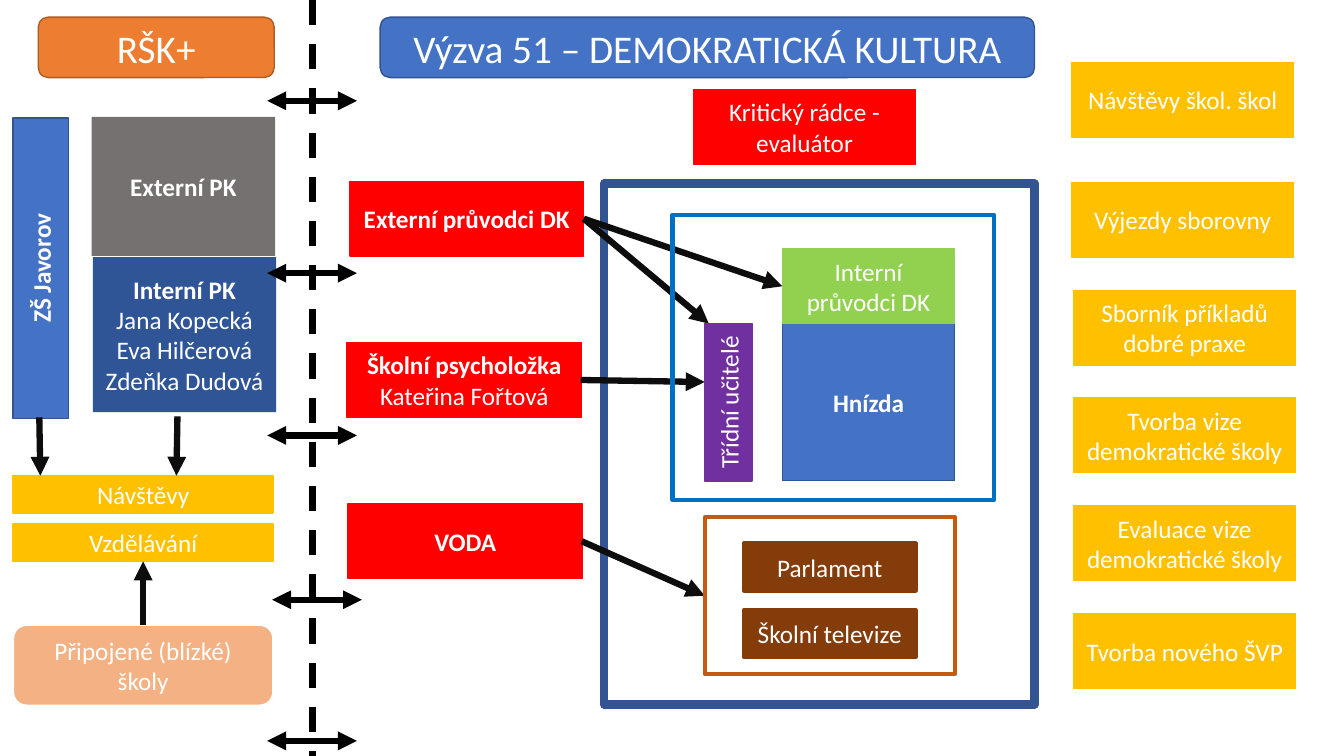
from dataclasses import dataclass

from lxml import etree
from pptx import Presentation
from pptx.dml.color import RGBColor
from pptx.enum.dml import MSO_LINE
from pptx.enum.shapes import MSO_CONNECTOR, MSO_SHAPE
from pptx.enum.text import MSO_ANCHOR, PP_ALIGN
from pptx.oxml.ns import qn
from pptx.util import Inches, Pt

RECT, ROUNDED = MSO_SHAPE.RECTANGLE, MSO_SHAPE.ROUNDED_RECTANGLE
STRAIGHT = MSO_CONNECTOR.STRAIGHT
DASH = MSO_LINE.DASH
MIDDLE, CENTER = MSO_ANCHOR.MIDDLE, PP_ALIGN.CENTER


@dataclass(frozen=True)
class Theme:
    font: str = "Calibri"
    title_size: int = 28
    body_size: int = 18
    arrow_width: float = 4.5
    white: str = "FFFFFF"
    black: str = "000000"
    arrow: str = "0D0D0D"
    blue: str = "4472C4"
    navy: str = "325491"
    deep_blue: str = "2F5597"
    bright_blue: str = "0070C0"
    orange: str = "ED7D31"
    orange_edge: str = "AF5C24"
    peach: str = "F4B183"
    rust: str = "C55A11"
    brown: str = "843C0B"
    grey: str = "767171"
    red: str = "FF0000"
    gold: str = "FFC000"
    green: str = "92D050"
    purple: str = "7030A0"


THEME = Theme()


def set_all(target, values):
    for name, value in values.items():
        setattr(target, name, value)


def write_text(shape, lines, bold_lines, size):
    frame = shape.text_frame
    set_all(frame, {"word_wrap": True, "vertical_anchor": MIDDLE})
    for index, line in enumerate(lines):
        para = frame.paragraphs[0] if index == 0 else frame.add_paragraph()
        para.alignment = CENTER
        span = para.add_run()
        span.text = line
        set_all(span.font, {"name": THEME.font, "size": Pt(size),
                            "bold": index < bold_lines})
        span.font.color.rgb = RGBColor.from_string(THEME.white)


@dataclass
class Region:
    """Draws parts at offsets from its own top left corner."""
    page: object
    left: float
    top: float

    def block(self, box, text="", fill=None, edge=None, edge_width=1, bold_lines=0,
              size=THEME.body_size, kind=RECT, upright=False):
        x, y, width, height = box
        x, y = x + self.left, y + self.top
        if upright:  # turned about its centre to fill the given box
            x, y = x + (width - height) / 2, y + (height - width) / 2
            width, height = height, width
        shape = self.page.shapes.add_shape(
            kind, Inches(x), Inches(y), Inches(width), Inches(height))
        shape.shadow.inherit = False
        shape.rotation = 270 if upright else 0
        if fill:
            shape.fill.solid()
            shape.fill.fore_color.rgb = RGBColor.from_string(fill)
        else:
            shape.fill.background()
        if edge:
            shape.line.color.rgb = RGBColor.from_string(edge)
            shape.line.width = Pt(edge_width)
        else:
            shape.line.fill.background()
        if text:
            write_text(shape, text.split("\n"), bold_lines, size)

    def line(self, start, end, color=THEME.arrow, ends=("tailEnd",), dash=None):
        points = [Inches(value) for x, y in (start, end)
                  for value in (x + self.left, y + self.top)]
        connector = self.page.shapes.add_connector(STRAIGHT, *points)
        connector.line.color.rgb = RGBColor.from_string(color)
        set_all(connector.line, {"width": Pt(THEME.arrow_width), "dash_style": dash})
        properties = connector.line._get_or_add_ln()
        for end_name in ends:
            etree.SubElement(properties, qn("a:" + end_name), type="triangle")
        etree.SubElement(connector._element.spPr, qn("a:effectLst"))


def draw_project(page, left, top):
    area = Region(page, left, top)
    # Outer frame and title
    area.block((2.55, 1.65, 4.27, 5.17), edge=THEME.navy, edge_width=6)
    area.block((0.33, 0, 6.49, 0.6), "Výzva 51 – DEMOKRATICKÁ KULTURA", THEME.blue,
               THEME.navy, size=THEME.title_size, kind=ROUNDED)

    # Support roles
    for x, y, width, text, bold_lines in (
            (0.03, 1.63, 2.32, "Externí průvodci DK", 1),
            (0, 3.23, 2.33, "Školní psycholožka\nKateřina Fořtová", 1),
            (0.01, 4.83, 2.33, "VODA", 1),
            (3.44, 0.72, 2.2, "Kritický rádce - evaluátor", 0)):
        area.block((x, y, width, 0.74), text, THEME.red, THEME.red,
                   bold_lines=bold_lines)

    # Links from roles to the school
    for start, end in (((2.35, 2), (4.32, 2.67)), ((2.35, 2), (3.59, 3.04)),
                       ((2.32, 3.6), (3.55, 3.62)), ((2.33, 5.2), (3.55, 5.74))):
        area.line(start, end)

    # Teachers and nests
    area.block((4.32, 3.04, 1.71, 1.56), "Hnízda", THEME.blue, THEME.navy, bold_lines=1)
    area.block((3.55, 3.04, 0.47, 1.56), "Třídní učitelé", THEME.purple, THEME.purple,
               upright=True)
    area.block((4.32, 2.3, 1.71, 0.74), "Interní průvodci DK", THEME.green, THEME.green)
    area.block((3.23, 1.96, 3.19, 2.83), edge=THEME.bright_blue, edge_width=3)

    # Parliament and television
    area.block((3.55, 4.96, 2.48, 1.56), edge=THEME.rust, edge_width=3)
    for row, text in enumerate(("Parlament", "Školní televize")):
        area.block((3.94, 5.22 + 0.66 * row, 1.7, 0.47), text, THEME.brown,
                   THEME.brown, edge_width=3)


def draw_activities(page, left, top):
    area = Region(page, left, top)
    activities = ("Návštěvy škol. škol", "Výjezdy sborovny",
                  "Sborník příkladů dobré praxe", "Tvorba vize demokratické školy",
                  "Evaluace vize demokratické školy", "Tvorba nového ŠVP")
    for row, text in enumerate(activities):
        x = 0.02 if row > 1 else 0
        y = 0.12 + 1.07 * row if row else 0
        area.block((x, y, 2.2, 0.74), text, THEME.gold, THEME.gold)


def draw_partner(page, left, top):
    area = Region(page, left, top)
    # Title and school
    area.block((0.25, 0, 2.34, 0.6), "RŠK+", THEME.orange, THEME.orange_edge,
               size=THEME.title_size, kind=ROUNDED)
    area.block((0, 1, 0.55, 2.98), "ZŠ Javorov", THEME.blue, THEME.navy,
               bold_lines=1, upright=True)

    # Consultants
    area.block((0.79, 2.38, 1.82, 1.54),
               "Interní PK\nJana Kopecká\nEva Hilčerová\nZdeňka Dudová",
               THEME.deep_blue, bold_lines=1)
    area.block((0.78, 0.99, 1.82, 1.38), "Externí PK", THEME.grey, bold_lines=1)

    # Shared activities and connected schools
    for row, text in enumerate(("Návštěvy", "Vzdělávání")):
        area.block((0, 4.55 + 0.48 * row, 2.58, 0.37), text, THEME.gold, THEME.gold)
    area.block((0, 6.03, 2.58, 0.8), "Připojené (blízké) školy", THEME.peach,
               THEME.white, edge_width=1.5, kind=ROUNDED)
    for start, end in (((1.29, 6.03), (1.29, 5.4)), ((0.26, 3.97), (0.27, 4.55)),
                       ((1.63, 3.96), (1.62, 4.55))):
        area.line(start, end)


def draw_divider(page, left, top, height):
    area = Region(page, left, top)
    area.line((0.45, 0), (0.45, height), THEME.black, ends=(), dash=DASH)
    # Exchanges across the divider
    for x, y in ((0, 1), (0, 2.71), (0, 4.32), (0.05, 5.95), (0, 7.35)):
        area.line((x, y), (x + 0.89, y), THEME.black, ends=("headEnd", "tailEnd"))


def main():
    deck = Presentation()
    set_all(deck, {"slide_width": Inches(13.33), "slide_height": Inches(7.5)})
    page = deck.slides.add_slide(deck.slide_layouts[6])
    draw_project(page, 3.44, 0.17)
    draw_activities(page, 10.63, 0.62)
    draw_partner(page, 0.13, 0.17)
    draw_divider(page, 2.65, 0, 7.5)
    deck.save("out.pptx")


if __name__ == "__main__":
    main()
